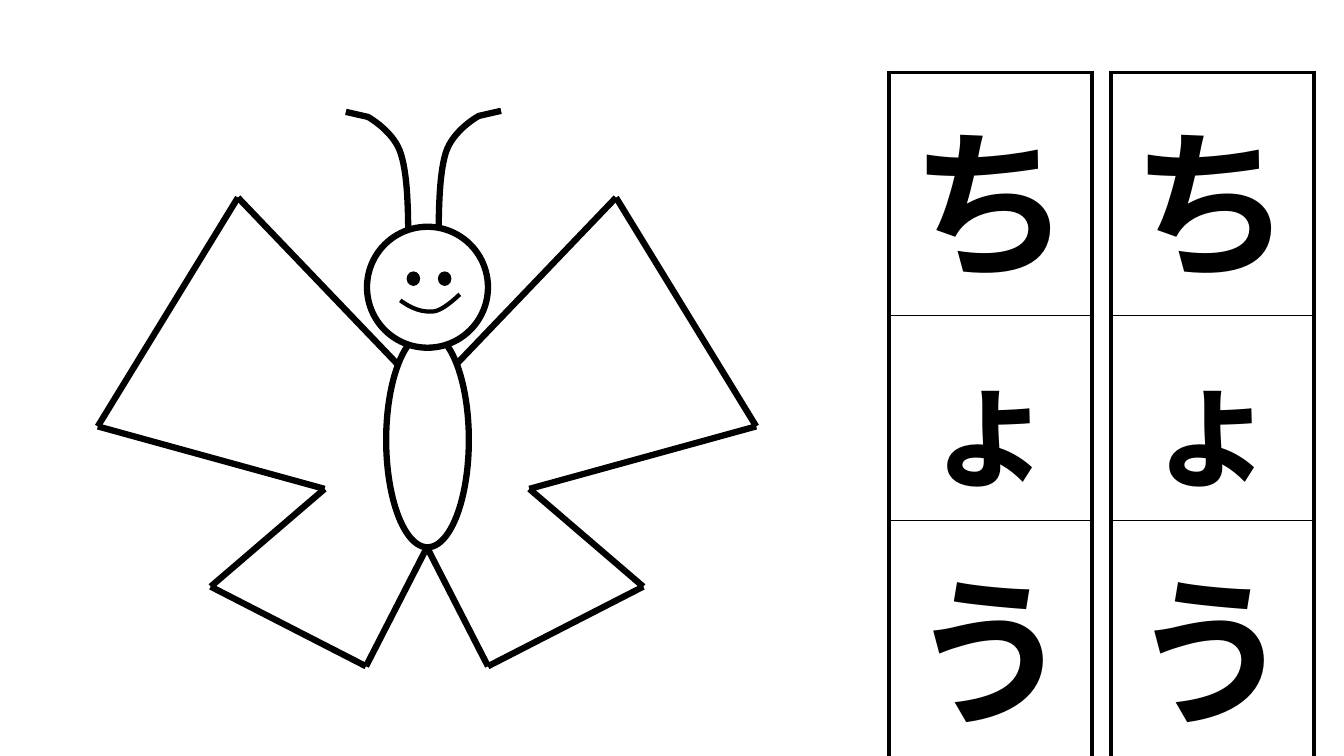
import dataclasses
import typing

import lxml.etree
import pptx
import pptx.dml.color
import pptx.enum.shapes
import pptx.enum.text
import pptx.oxml.ns
import pptx.util

Inches = pptx.util.Inches
Pt = pptx.util.Pt
Point = tuple[float, float]
Kind = pptx.enum.shapes.MSO_SHAPE
qn = pptx.oxml.ns.qn


@dataclasses.dataclass(frozen=True)
class Theme:
    ink: str = "000000"
    paper: str = "FFFFFF"
    font: str = "Noto Sans CJK JP"
    large: float = 115
    small: float = 96
    bold: float = 4.5
    frame: float = 3
    thin: float = 1


@dataclasses.dataclass(frozen=True)
class Letter:
    text: str
    size: float


@dataclasses.dataclass(frozen=True)
class Oval:
    kind: Kind
    left: float
    top: float
    width: float
    height: float
    width_pt: float
    fill: str | None = None


@dataclasses.dataclass(frozen=True)
class Curve:
    points: tuple[Point, ...]  # start, then three points per bend
    width_pt: float
    tip: Point | None = None


THEME = Theme()
WORD = (Letter("ち", THEME.large), Letter("ょ", THEME.small), Letter("う", THEME.large))
CARDS = (8.82, 11.02)
MIRROR = 8.47  # sum of the x values of two mirrored points
WING: tuple[Point, ...] = (
    (4.53, 3.61), (6.11, 1.96), (7.5, 4.23), (5.25, 4.85),
    (6.38, 5.82), (4.84, 6.61), (4.24, 5.44),
)
BODY = Oval(Kind.OVAL, 3.83, 3.3, 0.82, 2.13, THEME.bold)
HEAD = Oval(Kind.FLOWCHART_CONNECTOR, 3.64, 2.25, 1.2, 1.2, THEME.bold, THEME.paper)
EYES = tuple(
    Oval(Kind.FLOWCHART_CONNECTOR, x, 2.7, 0.12, 0.13, THEME.thin, THEME.ink)
    for x in (4.35, 4.04)
)
HORNS = (
    Curve(((4.05, 2.56), (4.05, 2.16), (4.05, 1.77), (3.98, 1.54),
           (3.92, 1.31), (3.65, 1.16), (3.65, 1.16)), THEME.bold, (3.43, 1.11)),
    Curve(((4.35, 2.54), (4.35, 2.15), (4.35, 1.75), (4.42, 1.52),
           (4.49, 1.29), (4.75, 1.15), (4.75, 1.15)), THEME.bold, (4.97, 1.1)),
)
SMILE = Curve(((3.97, 2.98), (4.09, 3.07), (4.2, 3.1), (4.3, 3.09),
               (4.4, 3.08), (4.56, 2.92), (4.56, 2.92)), THEME.frame)


def tint(code: str) -> pptx.dml.color.RGBColor:
    return pptx.dml.color.RGBColor.from_string(code)


def ink(line: typing.Any, width: float) -> None:
    line.color.rgb = tint(THEME.ink)
    line.width = Pt(width)


# Word cards
def edge(cell: typing.Any, side: str, width: float) -> None:
    props = cell._tc.get_or_add_tcPr()
    line = lxml.etree.SubElement(props, qn(f"a:ln{side}"), w=str(int(Pt(width))))
    fill = lxml.etree.SubElement(line, qn("a:solidFill"))
    lxml.etree.SubElement(fill, qn("a:srgbClr"), val=THEME.ink)


def write(cell: typing.Any, letter: Letter) -> None:
    cell.vertical_anchor = pptx.enum.text.MSO_ANCHOR.MIDDLE
    para = cell.text_frame.paragraphs[0]
    para.text = letter.text
    para.alignment = pptx.enum.text.PP_ALIGN.CENTER
    font = para.runs[0].font
    font.name, font.size, font.bold = THEME.font, Pt(letter.size), True
    font.color.rgb = tint(THEME.ink)
    lxml.etree.SubElement(font._element, qn("a:ea"), typeface=THEME.font)


def card(shapes: typing.Any, left: float) -> None:
    table = shapes.add_table(
        len(WORD), 1, Inches(left), Inches(0.72), Inches(2.01), Inches(5.91)
    ).table
    table.first_row = table.horz_banding = False
    last = len(WORD) - 1
    for row, letter in enumerate(WORD):
        table.rows[row].height = Inches(1.97)
        cell = table.cell(row, 0)
        write(cell, letter)
        edge(cell, "L", THEME.frame)
        edge(cell, "R", THEME.frame)
        edge(cell, "T", THEME.frame if row == 0 else THEME.thin)
        edge(cell, "B", THEME.frame if row == last else THEME.thin)
        cell.fill.background()


# Butterfly
def wing(shapes: typing.Any, points: typing.Sequence[Point]) -> None:
    group = shapes.add_group_shape()
    for start, end in zip(points, points[1:]):
        line = group.shapes.add_connector(
            pptx.enum.shapes.MSO_CONNECTOR.STRAIGHT,
            *(Inches(value) for value in start + end),
        )
        ink(line.line, THEME.bold)
        lxml.etree.SubElement(line._element.spPr, qn("a:effectLst"))


def oval(shapes: typing.Any, item: Oval) -> None:
    shape = shapes.add_shape(
        item.kind, Inches(item.left), Inches(item.top),
        Inches(item.width), Inches(item.height),
    )
    shape.shadow.inherit = False
    ink(shape.line, item.width_pt)
    if item.fill:
        shape.fill.solid()
        shape.fill.fore_color.rgb = tint(item.fill)
    else:
        shape.fill.background()


def bend(nodes: typing.Sequence[Point], steps: int = 16) -> list[Point]:
    trace = []
    for step in range(1, steps + 1):
        t = step / steps
        parts = ((1 - t) ** 3, 3 * t * (1 - t) ** 2, 3 * t**2 * (1 - t), t**3)
        trace.append((
            sum(part * node[0] for part, node in zip(parts, nodes)),
            sum(part * node[1] for part, node in zip(parts, nodes)),
        ))
    return trace


def curve(shapes: typing.Any, item: Curve) -> None:
    trace = [item.points[0]]
    for first in range(0, len(item.points) - 1, 3):
        trace += bend(item.points[first:first + 4])
    if item.tip:
        trace.append(item.tip)
    dots = [(Inches(x), Inches(y)) for x, y in trace]
    pen = shapes.build_freeform(*dots[0])
    pen.add_line_segments(dots[1:], close=False)
    shape = pen.convert_to_shape()
    shape.shadow.inherit = False
    shape.fill.background()
    ink(shape.line, item.width_pt)


def main() -> None:
    deck = pptx.Presentation()
    deck.slide_width, deck.slide_height = Inches(13.33), Inches(7.5)
    shapes = deck.slides.add_slide(deck.slide_layouts[6]).shapes
    for left in CARDS:
        card(shapes, left)
    wing(shapes, WING)
    wing(shapes, [(MIRROR - x, y) for x, y in WING])
    trunk = shapes.add_group_shape().shapes
    oval(trunk, BODY)
    for horn in HORNS:
        curve(trunk, horn)
    for item in (HEAD, *EYES):
        oval(trunk, item)
    curve(trunk, SMILE)
    deck.save("out.pptx")


if __name__ == "__main__":
    main()
